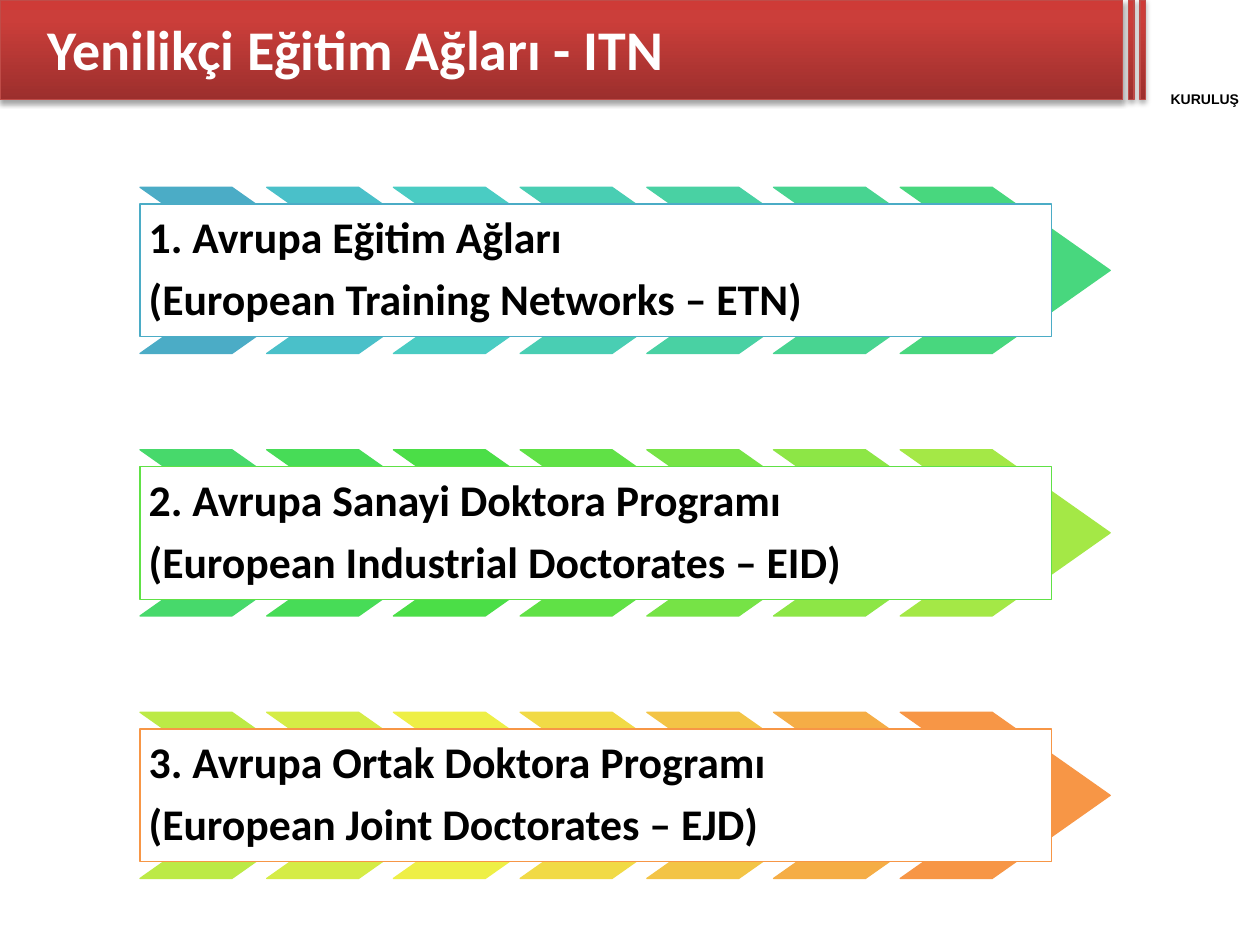
"""Build the slide on the three kinds of Innovative Training Networks."""
from copy import deepcopy

from pptx import Presentation
from pptx.dml.color import RGBColor
from pptx.enum.shapes import MSO_SHAPE
from pptx.enum.text import MSO_ANCHOR, MSO_AUTO_SIZE, PP_ALIGN
from pptx.oxml import parse_xml
from pptx.util import Pt

COLORS = {
    "white": "FFFFFF",
    "black": "000000",
    "bar_line": "BF4C48",
    "bar_dark": "9C2F2D",
    "bar_mid": "CB3E3A",
    "bar_light": "CE3B37",
}
SHADOW = (
    '<a:outerShdw xmlns:a="http://schemas.openxmlformats.org/drawingml/2006/main" '
    'blurRad="40000" dist="23000" dir="5400000" rotWithShape="0">'
    '<a:srgbClr val="000000"><a:alpha val="35000"/></a:srgbClr></a:outerShdw>'
)
BARS = [(0, 641.5), (645, 3), (651.5, 3)]
BAR_HEIGHT = 57
BAR_STOPS = [(0, "bar_dark"), (0.8, "bar_mid"), (1, "bar_light")]
PROGRAMS = [
    (
        ["1. Avrupa Eğitim Ağları", "(European Training Networks – ETN)"],
        ["4BACC6", "4AC0C9", "4ACCC3", "49CEB3", "49D1A3", "48D491", "48D77E"],
        "4BACC6",
    ),
    (
        ["2. Avrupa Sanayi Doktora Programı", "(European Industrial Doctorates – EID)"],
        ["47D96B", "47DC57", "4BDE47", "60E146", "76E346", "8DE646", "A4E846"],
        "60E146",
    ),
    (
        ["3. Avrupa Ortak Doktora Programı", "(European Joint Doctorates – EJD)"],
        ["BCEA46", "D5EC46", "EEEF46", "F1DA46", "F3C446", "F5AD46", "F79646"],
        "F79646",
    ),
]
LEFT, TOP, ROW_PITCH, CHEVRON_PITCH = 80, 107, 150, 72.4


def add_outlined(page, kind, bounds, line_color, fill_color=None):
    """Add a preset shape with a thin outline and an optional solid fill."""
    shape = page.shapes.add_shape(kind, *[Pt(length) for length in bounds])
    shape.shadow.inherit = False
    shape.line.color.rgb = RGBColor.from_string(line_color)
    shape.line.width = Pt(0.75)
    if fill_color:
        shape.fill.solid()
        shape.fill.fore_color.rgb = RGBColor.from_string(fill_color)
    return shape


def write(box, lines, frame_format, para_format, font_format, color):
    """Write one paragraph per line and apply the given formats."""
    frame = box.text_frame
    frame.text = "\n".join(lines)
    for name, value in frame_format.items():
        setattr(frame, name, value)
    for para in frame.paragraphs:
        for name, value in para_format.items():
            setattr(para, name, value)
        for span in para.runs:
            for name, value in font_format.items():
                setattr(span.font, name, value)
            span.font.color.rgb = RGBColor.from_string(COLORS[color])


deck = Presentation()
deck.slide_width, deck.slide_height = Pt(720), Pt(540)
page = deck.slides.add_slide(deck.slide_layouts[5])

for left, width in BARS:
    bar = add_outlined(
        page, MSO_SHAPE.RECTANGLE, (left, 0, width, BAR_HEIGHT), COLORS["bar_line"]
    )
    bar.fill.gradient()
    bar.fill.gradient_angle = 90
    stop_list = bar._element.xpath(".//a:gsLst")[0]
    stop_list.append(deepcopy(stop_list[0]))
    for stop, (position, color) in zip(bar.fill.gradient_stops, BAR_STOPS):
        stop.position = position
        stop.color.rgb = RGBColor.from_string(COLORS[color])
    bar._element.xpath("./p:spPr/a:effectLst")[0].append(parse_xml(SHADOW))

caption = page.shapes.add_textbox(Pt(657), Pt(52), Pt(63), Pt(10))
write(
    caption,
    ["KURULUŞ"],
    {"word_wrap": True, "margin_left": 0, "margin_top": 0,
     "margin_right": 0, "margin_bottom": 0},
    {"alignment": PP_ALIGN.CENTER},
    {"name": "Arial", "size": Pt(8), "bold": True},
    "black",
)

title = page.shapes.title
title.left, title.top, title.width, title.height = Pt(20), Pt(0), Pt(623.5), Pt(55.5)
write(
    title,
    ["Yenilikçi Eğitim Ağları - ITN"],
    {"vertical_anchor": MSO_ANCHOR.MIDDLE, "auto_size": MSO_AUTO_SIZE.NONE},
    {"alignment": PP_ALIGN.LEFT},
    {"name": "Calibri", "size": Pt(32), "bold": True},
    "white",
)
page.shapes._spTree.append(title._element)

for row, (lines, chevron_colors, frame_color) in enumerate(PROGRAMS):
    top = TOP + row * ROW_PITCH
    for column, color in enumerate(chevron_colors):
        bounds = (LEFT + column * CHEVRON_PITCH, top, 120, 95)
        chevron = add_outlined(page, MSO_SHAPE.CHEVRON, bounds, color, color)
        chevron.adjustments[0] = 0.71
    program = add_outlined(
        page, MSO_SHAPE.RECTANGLE, (LEFT, top + 9.5, 521, 76), frame_color, COLORS["white"]
    )
    write(
        program,
        lines,
        {"word_wrap": True, "vertical_anchor": MSO_ANCHOR.MIDDLE, "margin_left": Pt(5),
         "margin_top": Pt(5), "margin_right": Pt(5), "margin_bottom": Pt(5)},
        {"alignment": PP_ALIGN.LEFT, "line_spacing": 0.9, "space_after": Pt(8.5)},
        {"name": "Calibri", "size": Pt(25), "bold": True},
        "black",
    )

deck.save("out.pptx")
